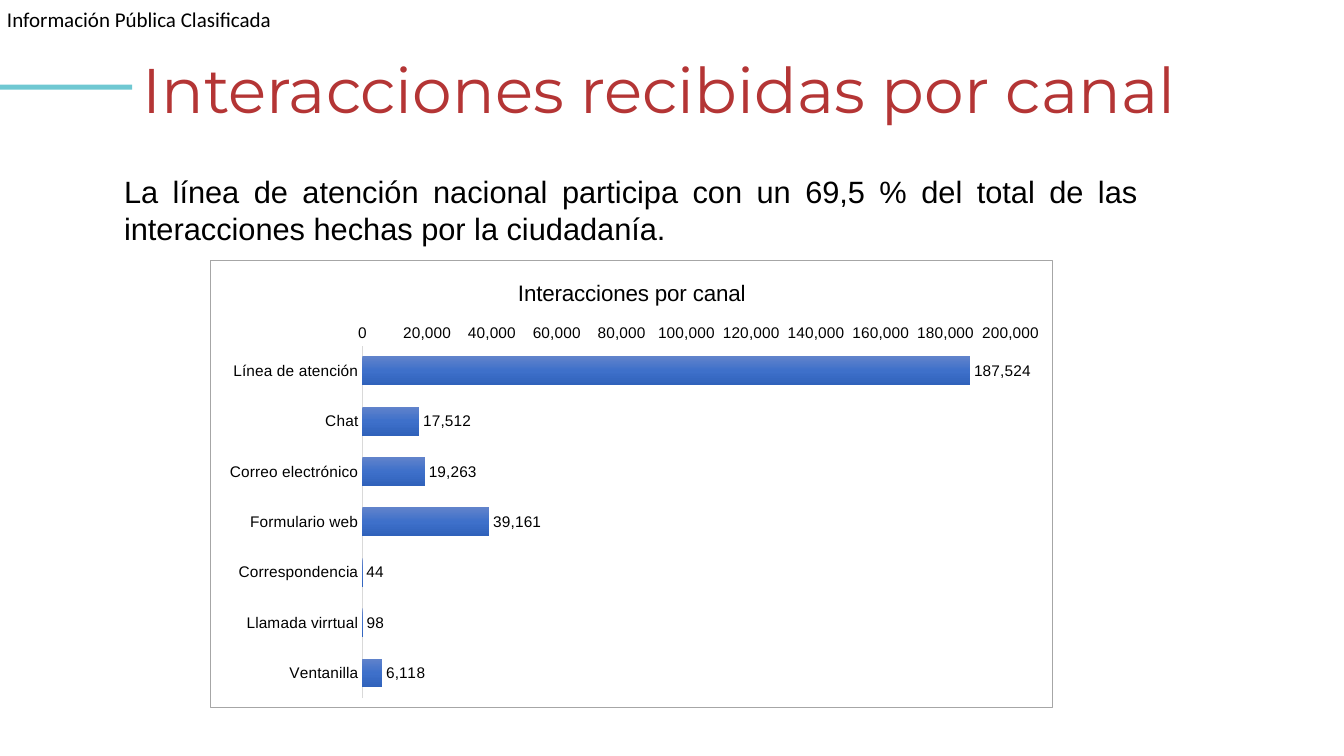
import pptx
import pptx.chart.data
import pptx.dml.color
import pptx.enum.chart
import pptx.enum.shapes
import pptx.enum.text
import pptx.oxml
import pptx.oxml.ns
import pptx.util

Pt = pptx.util.Pt
RGB = pptx.dml.color.RGBColor.from_string
NS = pptx.oxml.ns.nsdecls("a", "c")

THEME = {
    "accent": "6FC8D2",
    "axis": "D9D9D9",
    "border": "A6A6A6",
    "paper": "FFFFFF",
    "bar": [(0, "6183CB"), (50, "3E70CA"), (100, "3062BB")],
    "marking": {"name": "Calibri", "size": 15, "color": "000000"},
    "title": {"name": "Montserrat", "size": 45, "color": "B43535"},
    "body": {"name": "Arial", "size": 22, "color": "000000"},
    "chart_title": {"name": "Arial", "size": 16, "color": "000000"},
    "chart": {"name": "Arial", "size": 11, "color": "000000"},
}


def style(font, role):
    """Apply one of the theme's text roles to a font."""
    look = THEME[role]
    for key, value in {"name": look["name"], "size": Pt(look["size"]), "bold": False}.items():
        setattr(font, key, value)
    font.color.rgb = RGB(look["color"])


def write(sp, text, role, box, **frame):
    """Place a text shape and fill it with one styled paragraph."""
    sp.left, sp.top, sp.width, sp.height = map(Pt, box)
    tf = sp.text_frame
    frame = {"word_wrap": True, "auto_size": pptx.enum.text.MSO_AUTO_SIZE.NONE,
             "vertical_anchor": pptx.enum.text.MSO_ANCHOR.TOP, **frame}
    for key, value in frame.items():
        setattr(tf, key, value)
    p = tf.paragraphs[0]
    p.alignment = pptx.enum.text.PP_ALIGN.LEFT
    p.space_before = Pt(0)
    r = p.add_run()
    r.text = text
    style(r.font, role)
    return p


prs = pptx.Presentation()
prs.slide_width, prs.slide_height = Pt(960), Pt(540)
s = prs.slides.add_slide(prs.slide_layouts[1])
title, body = s.placeholders

# Heading
marking = s.shapes.add_textbox(0, 0, 0, 0)
write(marking, "Información Pública Clasificada", "marking", (5, 5, 193, 18), word_wrap=False,
      margin_left=0, margin_top=0, margin_right=0, margin_bottom=0)

rule = s.shapes.add_shape(pptx.enum.shapes.MSO_SHAPE.RECTANGLE, 0, Pt(60.5), Pt(94.5), Pt(3.6))
rule.shadow.inherit = False
rule.fill.solid()
rule.fill.fore_color.rgb = RGB(THEME["accent"])
rule.line.fill.background()

p = write(title, "Interacciones recibidas por canal", "title", (94.5, 35.3, 802, 59))
p.line_spacing = Pt(51)

p = write(body, "La línea de atención nacional participa con un 69,5 % del total de las "
          "interacciones hechas por la ciudadanía.", "body", (81.4, 119.5, 738.7, 60.5))
p.alignment = pptx.enum.text.PP_ALIGN.JUSTIFY
pPr = p._p.get_or_add_pPr()
pPr.set("marL", "0")
pPr.set("indent", "0")
pPr.append(pptx.oxml.parse_xml(f"<a:buNone {NS}/>"))

# Chart
interactions = {
    "Línea de atención": 187524,
    "Chat": 17512,
    "Correo electrónico": 19263,
    "Formulario web": 39161,
    "Correspondencia": 44,
    "Llamada virrtual": 98,
    "Ventanilla": 6118,
}
data = pptx.chart.data.CategoryChartData(number_format="#,##0")
data.categories = list(interactions)
data.add_series("Series 1", list(interactions.values()))
chart = s.shapes.add_chart(pptx.enum.chart.XL_CHART_TYPE.BAR_CLUSTERED,
                           Pt(150.3), Pt(186), Pt(602), Pt(319.5), data).chart
style(chart.font, "chart")
chart.has_legend = False
chart.has_title = True
p = chart.chart_title.text_frame.paragraphs[0]
r = p.add_run()
r.text = "Interacciones por canal"
style(r.font, "chart_title")

for axis in (chart.category_axis, chart.value_axis):
    axis.has_major_gridlines = False
    axis.major_tick_mark = axis.minor_tick_mark = pptx.enum.chart.XL_TICK_MARK.NONE
    style(axis.tick_labels.font, "chart")
chart.category_axis.reverse_order = True
chart.category_axis.format.line.color.rgb = RGB(THEME["axis"])
chart.category_axis.format.line.width = Pt(1)
value_axis = chart.value_axis
for key, value in {"minimum_scale": 0, "maximum_scale": 200000, "major_unit": 20000}.items():
    setattr(value_axis, key, value)
value_axis.format.line.fill.background()

plot = chart.plots[0]
for key, value in {"gap_width": 75, "overlap": -25, "vary_by_categories": False,
                   "has_data_labels": True}.items():
    setattr(plot, key, value)
labels = plot.data_labels
for key, value in {"show_value": True, "number_format": "#,##0", "number_format_is_linked": False,
                   "position": pptx.enum.chart.XL_LABEL_POSITION.OUTSIDE_END}.items():
    setattr(labels, key, value)
style(labels.font, "chart")
value_axis.tick_labels.number_format = "#,##0"
value_axis.tick_labels.number_format_is_linked = False

stops = "".join(f'<a:gs pos="{pos * 1000}"><a:srgbClr val="{color}"/></a:gs>'
                for pos, color in THEME["bar"])
plot.series[0]._element.get_or_add_spPr().append(pptx.oxml.parse_xml(
    f'<a:gradFill {NS}><a:gsLst>{stops}</a:gsLst><a:lin ang="5400000" scaled="0"/></a:gradFill>'))

# Chart frame and plot area, which python-pptx does not expose
chart_space = chart._chartSpace
chart_space.find(pptx.oxml.ns.qn("c:txPr")).addprevious(pptx.oxml.parse_xml(
    f'<c:spPr {NS}><a:solidFill><a:srgbClr val="{THEME["paper"]}"/></a:solidFill>'
    f'<a:ln w="{Pt(0.75)}"><a:solidFill><a:srgbClr val="{THEME["border"]}"/></a:solidFill>'
    '</a:ln></c:spPr>'))
plot_area = chart_space.chart.plotArea
for layout in plot_area.findall(pptx.oxml.ns.qn("c:layout")):
    plot_area.remove(layout)
inner = "".join(f'<c:{key} val="{value}"/>' for key, value in {
    "layoutTarget": "inner", "xMode": "edge", "yMode": "edge",
    "x": 0.18, "y": 0.19, "w": 0.77, "h": 0.79}.items())
plot_area.insert(0, pptx.oxml.parse_xml(
    f"<c:layout {NS}><c:manualLayout>{inner}</c:manualLayout></c:layout>"))

prs.save("out.pptx")
